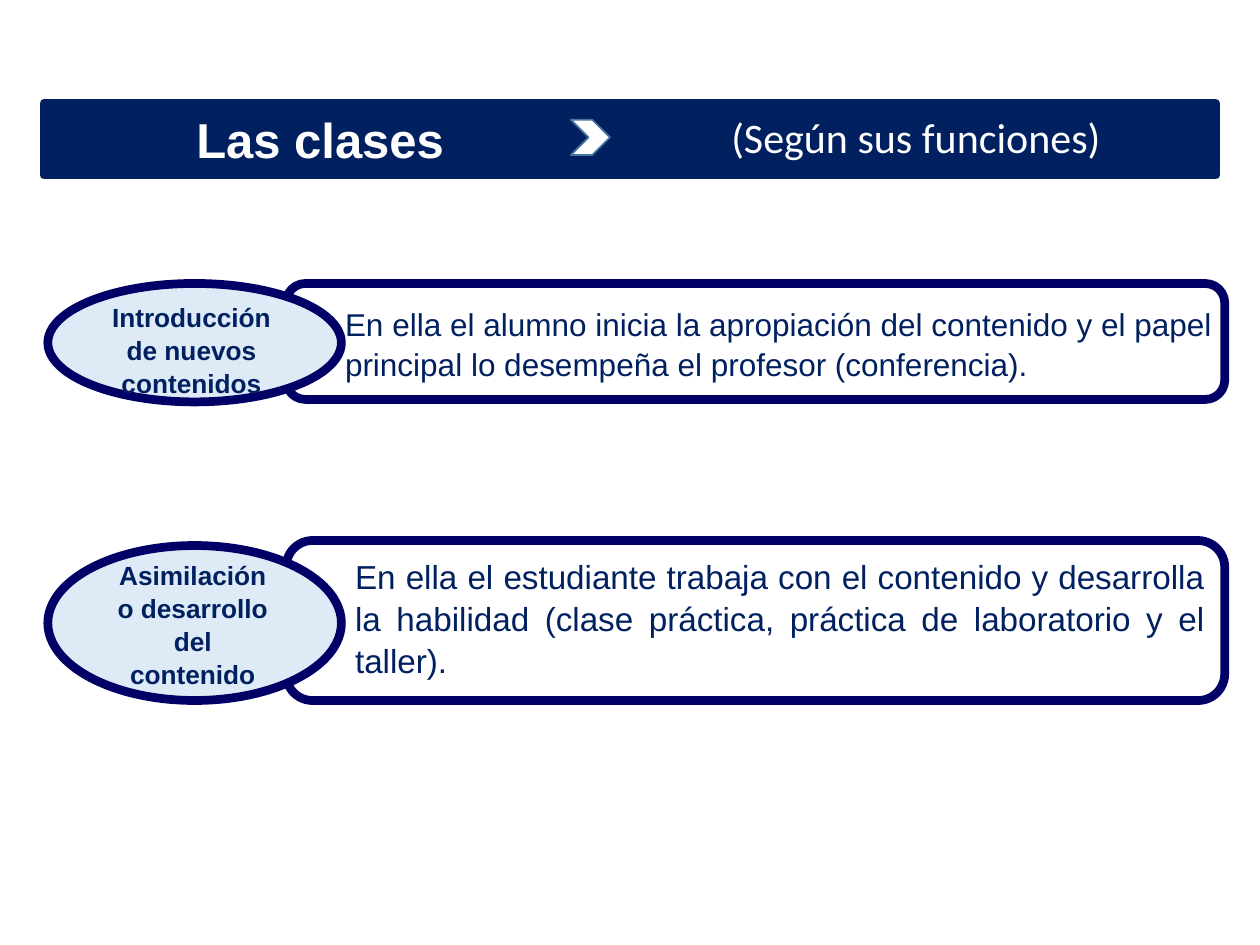
from pptx import Presentation
from pptx.dml.color import RGBColor
from pptx.enum.shapes import MSO_SHAPE as Shape
from pptx.enum.text import MSO_ANCHOR as Anchor, PP_ALIGN as Align
from pptx.util import Pt

COLORS = {"navy": "002060", "border": "000066", "pale": "DEEBF7",
          "white": "FFFFFF", "steel": "43739E"}

# Label box, description box, frame, ellipse: left, top, width, height
FUNCTIONS = [
    {"label": "Introducción de nuevos contenidos",
     "label_box": (51.84, 167.76, 115.2, 61.92),
     "detail": "En ella el alumno inicia la apropiación del contenido y el papel "
               "principal lo desempeña el profesor (conferencia).",
     "detail_box": (190.08, 169.92, 510, 51.12), "size": 18, "align": Align.LEFT,
     "frame": (163.44, 162, 536.4, 66.24), "ellipse": (27.36, 162, 167.76, 67.68)},
    {"label": "Asimilación o desarrollo del contenido",
     "label_box": (58.32, 315.36, 103.68, 79.92),
     "detail": "En ella el estudiante trabaja con el contenido y desarrolla la habilidad "
               "(clase práctica, práctica de laboratorio y el taller).",
     "detail_box": (195.84, 313.2, 499.68, 76.32), "size": 19, "align": Align.JUSTIFY,
     "frame": (163.44, 308.88, 536.4, 91.44), "ellipse": (27.36, 311.76, 167.76, 88.56)},
]


def color(name):
    return RGBColor.from_string(COLORS[name])


def paint(shape, fill, line, width):
    shape.fill.solid()
    shape.fill.fore_color.rgb = color(fill)
    shape.line.color.rgb = color(line)
    shape.line.width = Pt(width)


def add_shape(page, kind, box, fill, line, width):
    shape = page.shapes.add_shape(kind, *map(Pt, box))
    shape.shadow.inherit = False
    paint(shape, fill, line, width)


def write(shape, text, size, ink, font="Arial", bold=False, align=Align.LEFT, spacing=1):
    frame = shape.text_frame
    frame.word_wrap = True
    frame.text = text
    para = frame.paragraphs[0]
    para.alignment = align
    para.line_spacing = spacing
    para.space_before = Pt(0)
    para.font.name = font
    para.font.size = Pt(size)
    para.font.bold = bold
    para.font.color.rgb = color(ink)


def add_text(page, box, text, size, ink, **style):
    write(page.shapes.add_textbox(*map(Pt, box)), text, size, ink, **style)


def add_banner(page, box):
    left, top, width, height = box
    title = page.shapes.title
    title.left, title.top, title.width, title.height = map(Pt, box)
    paint(title, "navy", "navy", 5)
    write(title, "Las clases", 28, "white", bold=True)
    title.text_frame.margin_left = Pt(87)
    title.text_frame.vertical_anchor = Anchor.MIDDLE
    add_shape(page, Shape.CHEVRON, (left + 301, top + 9.4, 22.32, 20.16), "white", "steel", 1)
    add_text(page, (left + 334.8, top + 1.4, 326.9, 36.7), "(Según sus funciones)", 24,
             "white", font="Calibri", align=Align.CENTER)


def add_function(page, item):
    add_shape(page, Shape.ROUNDED_RECTANGLE, item["frame"], "white", "border", 5)
    add_text(page, item["detail_box"], item["detail"], item["size"], "navy",
             align=item["align"], spacing=1.05)
    add_shape(page, Shape.OVAL, item["ellipse"], "pale", "border", 5)
    add_text(page, item["label_box"], item["label"], 15, "navy", bold=True,
             align=Align.CENTER, spacing=1.05)


def main():
    deck = Presentation()
    deck.slide_width, deck.slide_height = Pt(720), Pt(540)
    page = deck.slides.add_slide(deck.slide_layouts[5])

    # Title banner
    add_banner(page, (25.2, 59.04, 669.6, 41.04))

    # Class types by function
    for item in FUNCTIONS:
        add_function(page, item)

    deck.save("out.pptx")


if __name__ == "__main__":
    main()
